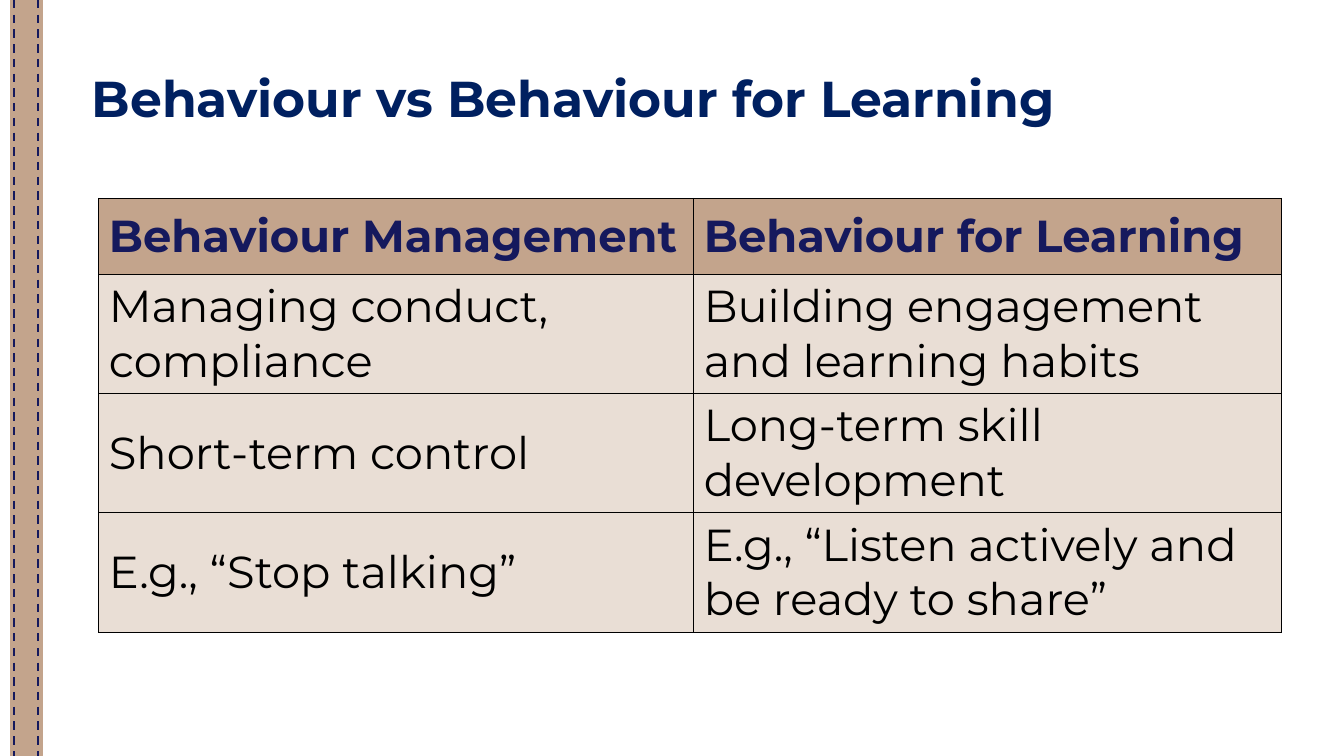
from lxml.etree import SubElement
from pptx import Presentation
from pptx.dml.color import RGBColor
from pptx.enum.dml import MSO_LINE
from pptx.enum.shapes import MSO_CONNECTOR, MSO_SHAPE
from pptx.enum.text import MSO_ANCHOR, PP_ALIGN
from pptx.oxml.ns import qn
from pptx.util import Pt

EMU_PER_PX = 9144
SLIDE_WIDTH, SLIDE_HEIGHT = 1333, 750
TAN, NAVY, TITLE_BLUE, BLACK = "C3A48C", "15195D", "002060", "000000"
ROWS = [
    ("Behaviour Management", "Behaviour for Learning"),
    ("Managing conduct, compliance", "Building engagement and learning habits"),
    ("Short-term control", "Long-term skill development"),
    ("E.g., “Stop talking”", "E.g., “Listen actively and be ready to share”"),
]
COLUMN_WIDTHS = (590, 583)
ROW_HEIGHTS = (75, 118, 118, 118)


def px(length):
    return length * EMU_PER_PX


def color(hex_string):
    return RGBColor.from_string(hex_string)


def write_text(text_frame, text, size=32, hex_color=BLACK, bold=False, spacing=1.0):
    paragraph = text_frame.paragraphs[0]
    paragraph.alignment = PP_ALIGN.LEFT
    paragraph.line_spacing = spacing
    paragraph.space_before = Pt(0)
    run = paragraph.add_run()
    run.text = text
    run.font.name = "Montserrat"
    run.font.size = Pt(size)
    run.font.bold = bold
    run.font.color.rgb = color(hex_color)


def add_band(slide, left, width):
    shape = slide.shapes.add_shape(MSO_SHAPE.RECTANGLE, px(left), 0, px(width), px(SLIDE_HEIGHT))
    shape.shadow.inherit = False
    shape.fill.solid()
    shape.fill.fore_color.rgb = color(TAN)
    shape.line.color.rgb = color(TAN)
    shape.line.width = Pt(0.75)


def add_stitch(slide, x):
    connector = slide.shapes.add_connector(MSO_CONNECTOR.STRAIGHT, px(x), 0, px(x), px(SLIDE_HEIGHT))
    connector.line.color.rgb = color(NAVY)
    connector.line.width = Pt(1.5)
    connector.line.dash_style = MSO_LINE.DASH
    SubElement(connector._element.spPr, qn("a:effectLst"))


def add_title(slide, text):
    title = slide.shapes.title
    title.left, title.top, title.width, title.height = px(81), px(68), px(1059), px(81)
    title.text_frame.word_wrap = True
    title.text_frame.vertical_anchor = MSO_ANCHOR.TOP
    write_text(title.text_frame, text, size=36, hex_color=TITLE_BLUE, bold=True, spacing=0.9)


def add_borders(cell):
    properties = cell._tc.get_or_add_tcPr()
    for side in ("lnL", "lnR", "lnT", "lnB"):
        border = SubElement(properties, qn(f"a:{side}"), w=str(Pt(1)))
        fill = SubElement(border, qn("a:solidFill"))
        SubElement(fill, qn("a:srgbClr"), val=BLACK)


def format_cell(cell, text, is_header):
    add_borders(cell)
    cell.vertical_anchor = MSO_ANCHOR.MIDDLE
    cell.fill.solid()
    cell.fill.fore_color.rgb = color(TAN)
    if is_header:
        cell.margin_right = 0
    else:
        tint = cell._tc.tcPr.find(qn("a:solidFill")).find(qn("a:srgbClr"))
        SubElement(tint, qn("a:alpha"), val="36000")
    write_text(cell.text_frame, text, hex_color=NAVY if is_header else BLACK, bold=is_header)


def add_comparison_table(slide, left, top):
    frame = slide.shapes.add_table(
        len(ROWS), len(COLUMN_WIDTHS), px(left), px(top), px(sum(COLUMN_WIDTHS)), px(sum(ROW_HEIGHTS))
    )
    table = frame.table
    table.horz_banding = False
    for column, width in zip(table.columns, COLUMN_WIDTHS):
        column.width = px(width)
    for row_index, (row, height) in enumerate(zip(table.rows, ROW_HEIGHTS)):
        row.height = px(height)
        for cell, text in zip(row.cells, ROWS[row_index]):
            format_cell(cell, text, is_header=row_index == 0)


def main():
    presentation = Presentation()
    presentation.slide_width = px(SLIDE_WIDTH)
    presentation.slide_height = px(SLIDE_HEIGHT)
    slide = presentation.slides.add_slide(presentation.slide_layouts[5])
    add_band(slide, 10, 32)
    for x in (14, 38):
        add_stitch(slide, x)
    add_title(slide, "Behaviour vs Behaviour for Learning")
    add_comparison_table(slide, 98, 197)
    presentation.save("out.pptx")


if __name__ == "__main__":
    main()
